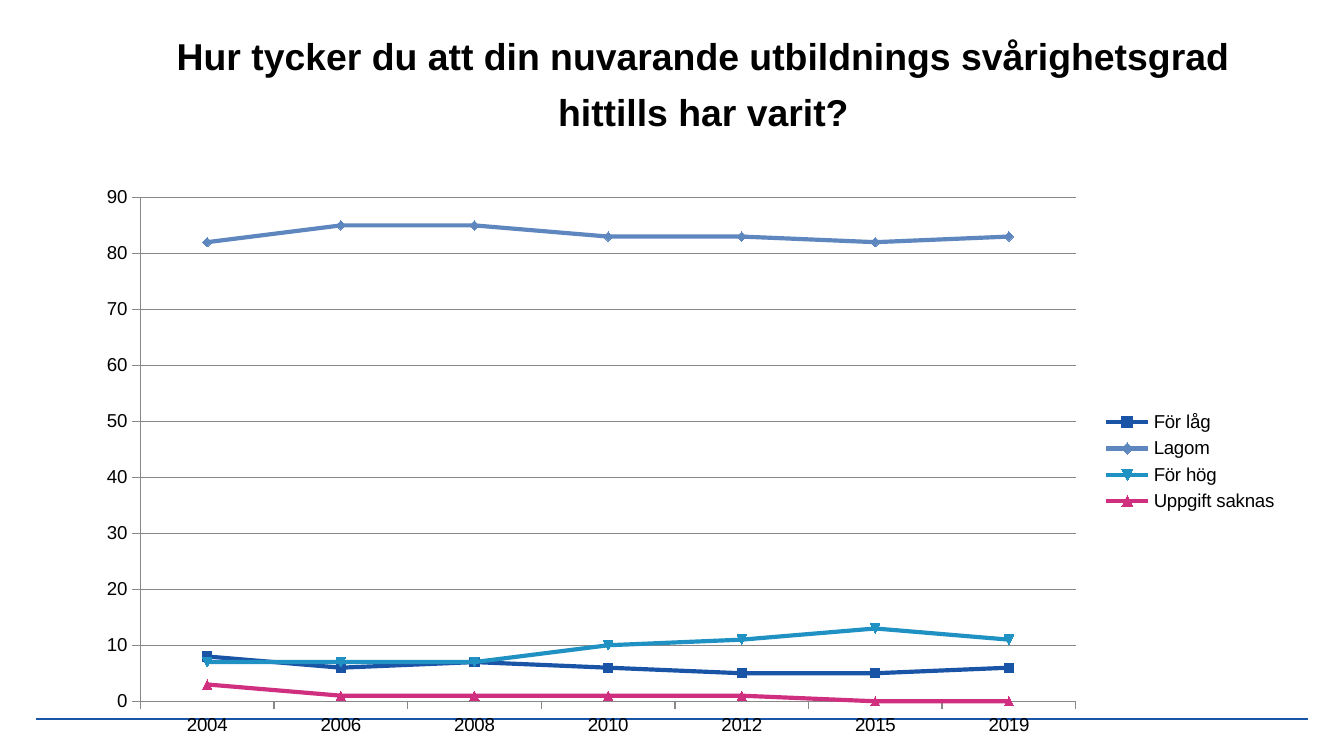
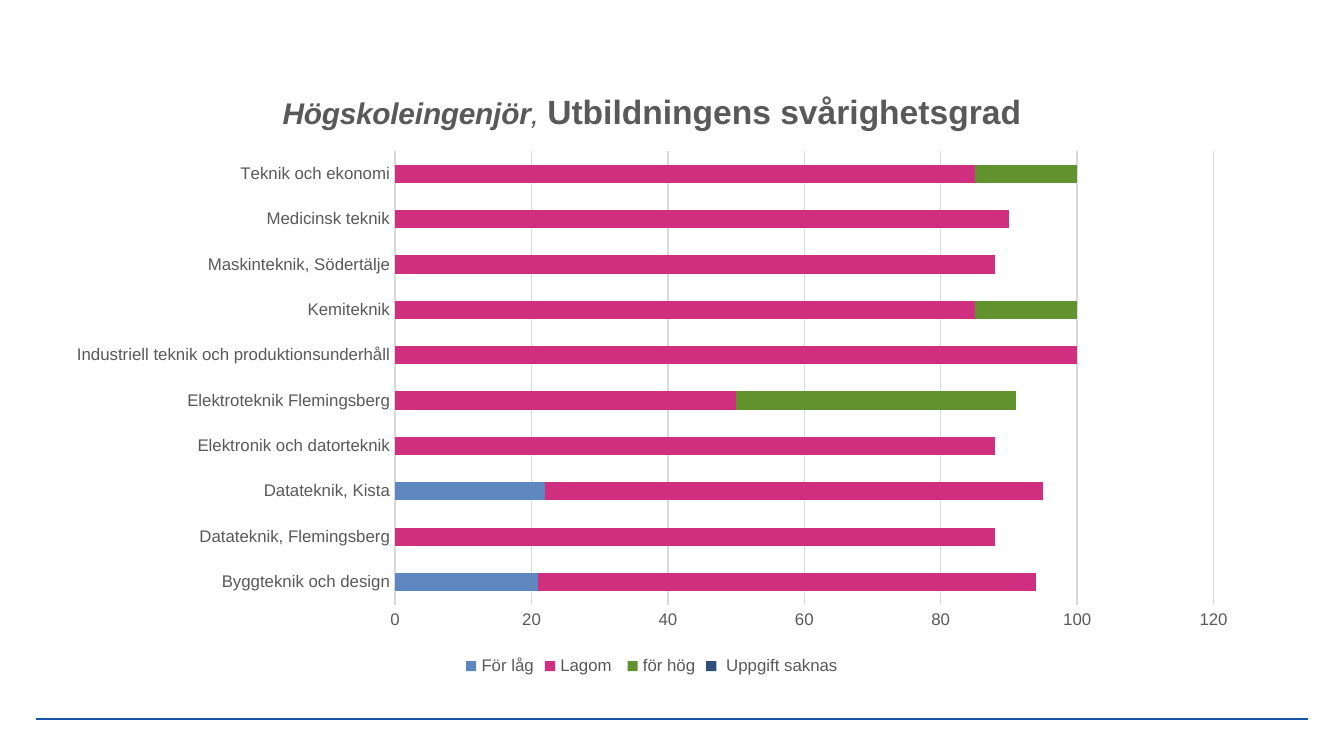
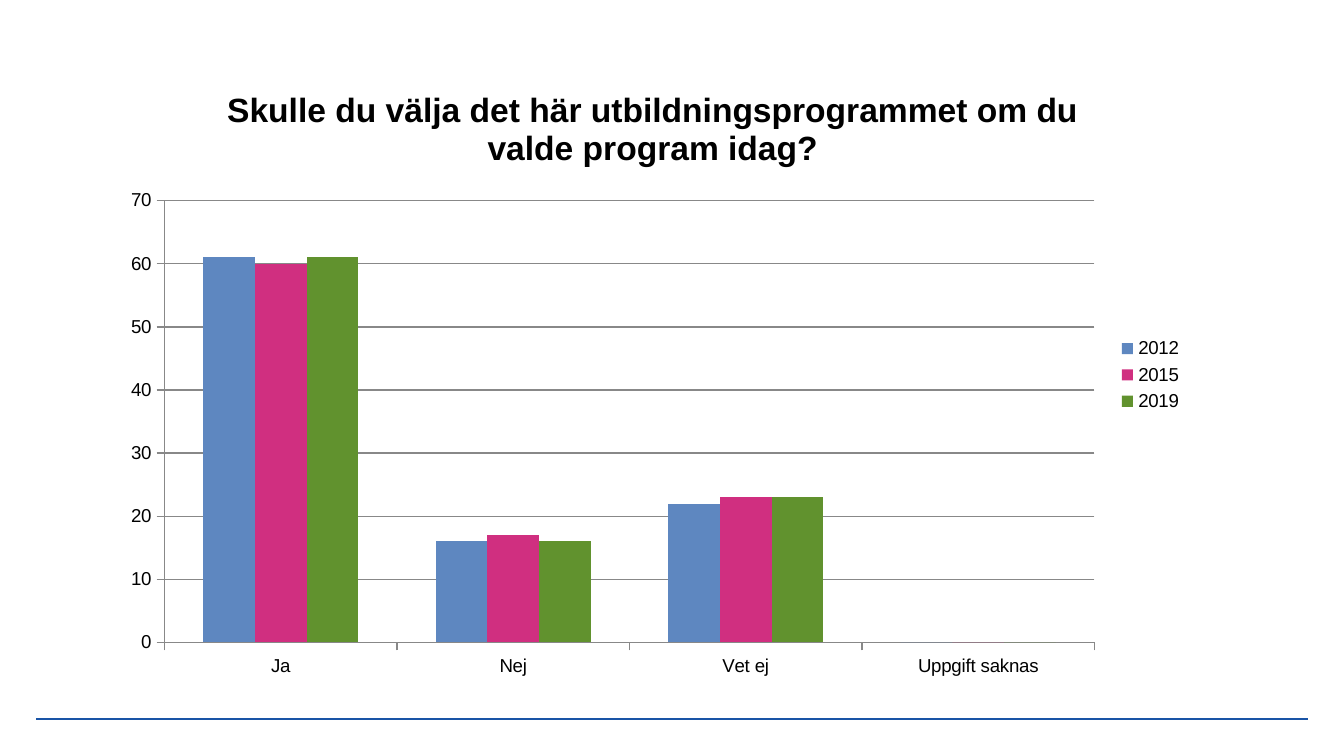
import dataclasses
import typing

import lxml.etree
import pptx
import pptx.chart.chart
import pptx.chart.data
import pptx.dml.color
import pptx.enum.chart
import pptx.enum.shapes
import pptx.enum.text
import pptx.oxml.ns
import pptx.slide
import pptx.util

COLORS = {
    "navy": "1954A6",
    "blue": "5E87C0",
    "cyan": "2091C3",
    "pink": "D02F80",
    "green": "61922E",
    "slate": "30507B",
    "black": "000000",
    "dark_gray": "595959",
    "gray": "888888",
    "light_gray": "D9D9D9",
}
FONT = "Arial"
WIDTH = pptx.util.Inches(10)
HEIGHT = WIDTH * 9 // 16
ChartType = pptx.enum.chart.XL_CHART_TYPE
LegendPosition = pptx.enum.chart.XL_LEGEND_POSITION
TickMark = pptx.enum.chart.XL_TICK_MARK


class PercentArea(typing.NamedTuple):
    left: float
    top: float
    width: float
    height: float


class Series(typing.NamedTuple):
    name: str
    values: list[float | None]
    color: str


class TitleRun(typing.NamedTuple):
    text: str
    size: float
    bold: bool = True
    italic: bool = False


@dataclasses.dataclass
class SurveyChart:
    kind: ChartType
    area: PercentArea
    plot: PercentArea
    categories: list[str]
    series: list[Series]
    maximum: int
    step: int
    title: list[TitleRun] = dataclasses.field(default_factory=list)
    title_corner: tuple[float, float] = (0, 0)
    legend: LegendPosition = LegendPosition.RIGHT
    tick: TickMark = TickMark.OUTSIDE
    size: float = 10
    text_color: str = "black"
    grid_color: str = "gray"
    value_line: bool = True
    overlap: int = 0


def across(percent: float) -> int:
    return round(WIDTH * percent / 100)


def down(percent: float) -> int:
    return round(HEIGHT * percent / 100)


def box(area: PercentArea) -> tuple[int, int, int, int]:
    return across(area.left), down(area.top), across(area.width), down(area.height)


def rgb(name: str) -> pptx.dml.color.RGBColor:
    return pptx.dml.color.RGBColor.from_string(COLORS[name])


def style_font(font, size: float, color: str) -> None:
    font.name = FONT
    font.size = pptx.util.Pt(size)
    font.color.rgb = rgb(color)


def add_text(paragraph, text: str, *, size: float, color: str = "black",
             bold: bool = False, italic: bool = False) -> None:
    run = paragraph.add_run()
    run.text = text
    style_font(run.font, size, color)
    run.font.bold = bold
    run.font.italic = italic


def style_line(line, color: str, width: float = 0.75) -> None:
    line.color.rgb = rgb(color)
    line.width = pptx.util.Pt(width)


def set_layout(element, index: int, **settings: typing.Any) -> None:
    qn = pptx.oxml.ns.qn
    for old in element.findall(qn("c:layout")):
        element.remove(old)
    layout = lxml.etree.Element(qn("c:layout"))
    manual = lxml.etree.SubElement(layout, qn("c:manualLayout"))
    for tag, value in settings.items():
        lxml.etree.SubElement(manual, qn(f"c:{tag}")).set("val", str(value))
    element.insert(index, layout)


def add_base_slide(deck) -> pptx.slide.Slide:
    slide = deck.slides.add_slide(deck.slide_layouts[6])
    rule = slide.shapes.add_connector(
        pptx.enum.shapes.MSO_CONNECTOR.STRAIGHT,
        across(2.7), down(95.1), across(97.3), down(95.1))
    style_line(rule.line, "navy", 1)
    lxml.etree.SubElement(rule._element.spPr, pptx.oxml.ns.qn("a:effectLst"))
    return slide


def add_heading(slide: pptx.slide.Slide, text: str, area: PercentArea) -> None:
    frame = slide.shapes.add_textbox(*box(area)).text_frame
    frame.word_wrap = True
    frame.vertical_anchor = pptx.enum.text.MSO_ANCHOR.BOTTOM
    frame.margin_top = frame.margin_bottom = 0
    paragraph = frame.paragraphs[0]
    paragraph.alignment = pptx.enum.text.PP_ALIGN.CENTER
    paragraph.line_spacing = pptx.util.Pt(30)
    add_text(paragraph, text, size=20, bold=True)


def style_axes(chart: pptx.chart.chart.Chart, survey: SurveyChart) -> None:
    for axis in (chart.category_axis, chart.value_axis):
        axis.major_tick_mark = survey.tick
        axis.minor_tick_mark = TickMark.NONE
        style_font(axis.tick_labels.font, survey.size, survey.text_color)
        style_line(axis.format.line, survey.grid_color)
    chart.category_axis.has_major_gridlines = False
    scale = chart.value_axis
    scale.has_major_gridlines = True
    style_line(scale.major_gridlines.format.line, survey.grid_color)
    scale.minimum_scale = 0
    scale.maximum_scale = survey.maximum
    scale.major_unit = survey.step
    if not survey.value_line:
        scale.format.line.fill.background()


def style_series(chart: pptx.chart.chart.Chart, survey: SurveyChart) -> None:
    plot = chart.plots[0]
    plot.vary_by_categories = False
    is_line = survey.kind == ChartType.LINE_MARKERS
    if not is_line:
        plot.gap_width = 150
        plot.overlap = survey.overlap
    for drawn, answer in zip(plot.series, survey.series):
        if is_line:
            drawn.smooth = False
            style_line(drawn.format.line, answer.color, 2.25)
            drawn.marker.size = 5
            fill = drawn.marker.format.fill
            style_line(drawn.marker.format.line, answer.color)
        else:
            fill = drawn.format.fill
        fill.solid()
        fill.fore_color.rgb = rgb(answer.color)


def add_chart_title(chart: pptx.chart.chart.Chart, survey: SurveyChart) -> None:
    chart.has_title = bool(survey.title)
    if not survey.title:
        return
    title = chart.chart_title
    paragraph = title.text_frame.paragraphs[0]
    for run in survey.title:
        add_text(paragraph, run.text, size=run.size, color=survey.text_color,
                 bold=run.bold, italic=run.italic)
    left, top = survey.title_corner
    set_layout(title._element, 1, xMode="edge", yMode="edge",
               x=(left - survey.area.left) / survey.area.width,
               y=(top - survey.area.top) / survey.area.height)


def add_survey_chart(slide: pptx.slide.Slide, survey: SurveyChart) -> None:
    data = pptx.chart.data.CategoryChartData()
    data.categories = survey.categories
    for answer in survey.series:
        data.add_series(answer.name, answer.values)
    chart = slide.shapes.add_chart(survey.kind, *box(survey.area), data).chart
    style_font(chart.font, survey.size, survey.text_color)
    add_chart_title(chart, survey)
    style_axes(chart, survey)
    style_series(chart, survey)
    chart.has_legend = True
    chart.legend.position = survey.legend
    chart.legend.include_in_layout = False
    style_font(chart.legend.font, survey.size, survey.text_color)
    area, plot = survey.area, survey.plot
    set_layout(chart._chartSpace.chart.plotArea, 0,
               layoutTarget="inner", xMode="edge", yMode="edge",
               x=(plot.left - area.left) / area.width,
               y=(plot.top - area.top) / area.height,
               w=plot.width / area.width, h=plot.height / area.height)


DIFFICULTY_BY_YEAR = SurveyChart(
    kind=ChartType.LINE_MARKERS,
    area=PercentArea(6.1, 23.3, 90, 75.55),
    plot=PercentArea(10.45, 26.12, 69.6, 66.67),
    categories=["2004", "2006", "2008", "2010", "2012", "2015", "2019"],
    series=[
        Series("För låg ", [8, 6, 7, 6, 5, 5, 6], "navy"),
        Series("Lagom ", [82, 85, 85, 83, 83, 82, 83], "blue"),
        Series("För hög", [7, 7, 7, 10, 11, 13, 11], "cyan"),
        Series("Uppgift saknas", [3, 1, 1, 1, 1, 0, 0], "pink"),
    ],
    maximum=90,
    step=10,
)

DIFFICULTY_BY_PROGRAMME = SurveyChart(
    kind=ChartType.BAR_STACKED,
    area=PercentArea(3.9, 9.07, 89.2, 81.07),
    plot=PercentArea(29.4, 20, 60.9, 60),
    categories=[
        "Byggteknik och design",
        "Datateknik, Flemingsberg",
        "Datateknik, Kista",
        "Elektronik och datorteknik",
        "Elektroteknik Flemingsberg",
        "Industriell teknik och produktionsunderhåll",
        "Kemiteknik",
        "Maskinteknik, Södertälje",
        "Medicinsk teknik",
        "Teknik och ekonomi",
    ],
    series=[
        Series("För låg", [21, 0, 22, 0, 0, 0, 0, 0, 0, 0], "blue"),
        Series("Lagom ", [73, 88, 73, 88, 50, 100, 85, 88, 90, 85], "pink"),
        Series("för hög", [0, 0, 0, None, 41, 0, 15, 0, 0, 15], "green"),
        Series(" Uppgift saknas", [0] * 10, "slate"),
    ],
    maximum=120,
    step=20,
    title=[
        TitleRun("Högskoleingenjör", 16, italic=True),
        TitleRun(", ", 16, bold=False, italic=True),
        TitleRun("Utbildningens svårighetsgrad", 18),
    ],
    title_corner=(20.73, 11.55),
    legend=LegendPosition.BOTTOM,
    tick=TickMark.NONE,
    size=9,
    text_color="dark_gray",
    grid_color="light_gray",
    value_line=False,
    overlap=100,
)

CHOOSE_AGAIN = SurveyChart(
    kind=ChartType.COLUMN_CLUSTERED,
    area=PercentArea(8.1, 8.18, 80.9, 82.84),
    plot=PercentArea(12.24, 26.55, 69.2, 58.45),
    categories=["Ja", "Nej", "Vet ej", "Uppgift saknas"],
    series=[
        Series("2012", [61, 16, 22, 0], "blue"),
        Series("2015", [60, 17, 23, 0], "pink"),
        Series("2019", [61, 16, 23, 0], "green"),
    ],
    maximum=70,
    step=10,
    title=[TitleRun("Skulle du välja det här utbildningsprogrammet om du "
                    "valde program idag?", 18)],
    title_corner=(16.45, 10.8),
)


def main() -> None:
    deck = pptx.Presentation()
    deck.slide_width = WIDTH
    deck.slide_height = HEIGHT
    for survey in (DIFFICULTY_BY_YEAR, DIFFICULTY_BY_PROGRAMME, CHOOSE_AGAIN):
        slide = add_base_slide(deck)
        if survey is DIFFICULTY_BY_YEAR:
            add_heading(slide, "Hur tycker du att din nuvarande utbildnings "
                        "svårighetsgrad hittills har varit?",
                        PercentArea(11.6, 11.55, 81.5, 6.2))
        add_survey_chart(slide, survey)
    deck.save("out.pptx")


if __name__ == "__main__":
    main()
